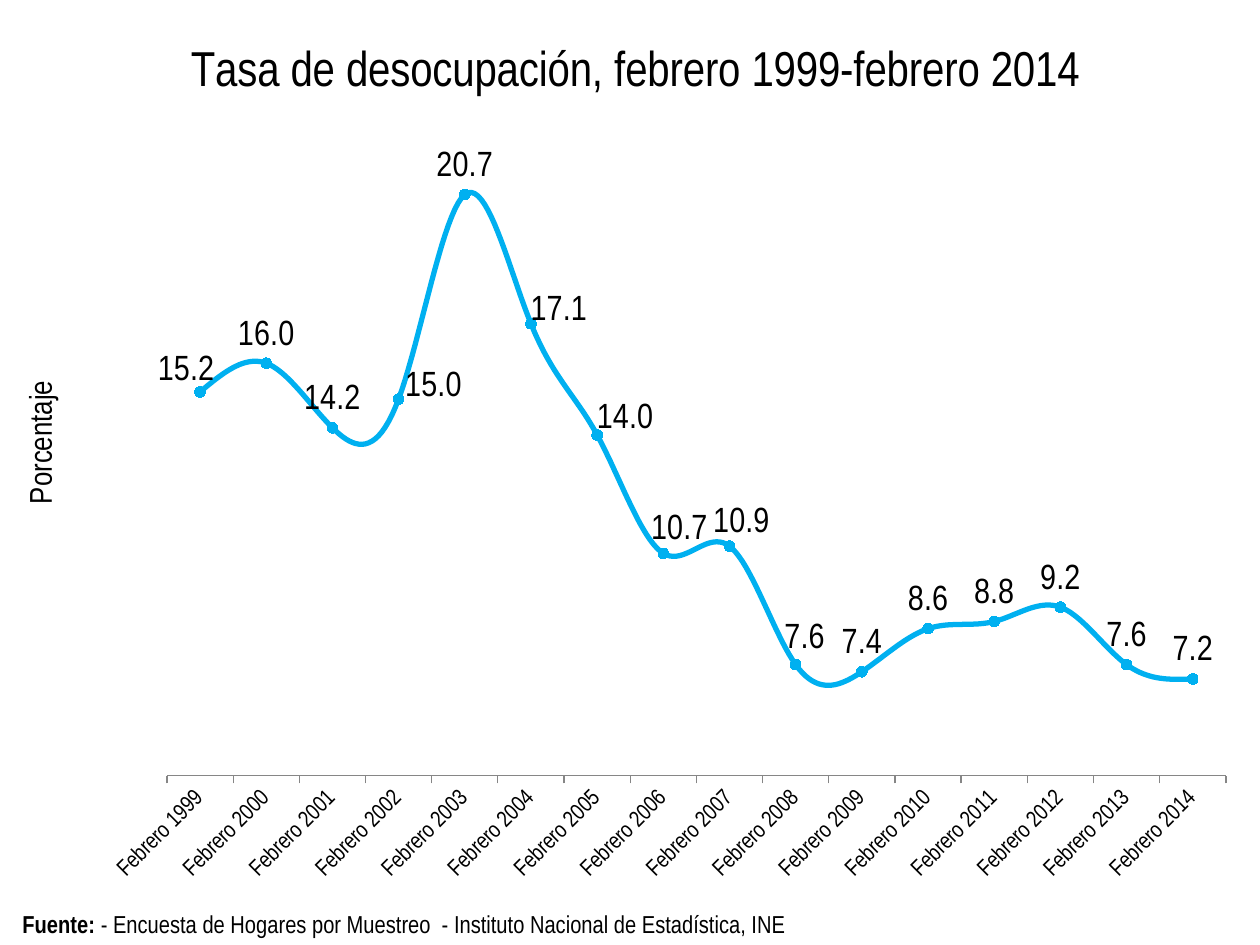
from lxml import etree
from pptx import Presentation
from pptx import util as u
from pptx.chart.data import CategoryChartData
from pptx.dml.color import RGBColor
from pptx.enum import chart as c, text
from pptx.oxml.ns import qn

PX = 914400 // 126
BLACK = RGBColor(0x00, 0x00, 0x00)
BLUE = RGBColor(0x00, 0xB0, 0xF0)
GRAY = RGBColor(0x86, 0x86, 0x86)
FONT = "Arial Narrow"
NUMBER_FORMAT = "0.0"

CHART_BOX = (20, 13, 1231, 886)
PLOT_BOX = (147, 117, 1059, 646)  # inside the chart
TITLE_AT = (162, 23)
AXIS_TITLE_AT = (0, 362)
RATES = [15.2, 16, 14.2, 15, 20.7, 17.1, 14, 10.7,
         10.9, 7.6, 7.4, 8.6, 8.8, 9.2, 7.6, 7.2]
FIRST_YEAR = 1999
# Point index: shift of its label from the place above the marker
LABEL_SHIFTS = {0: (-14, 7), 3: (35, 16), 5: (28, 15), 6: (28, 12),
                7: (16, 4), 8: (12, 4), 9: (9, 2)}


def px(*lengths):
    return [u.Emu(length * PX) for length in lengths]


def set_font(font, size, bold=False):
    font.name, font.size, font.bold = FONT, u.Pt(size), bold
    font.color.rgb = BLACK


def make_layout(lengths, inner=False, edge=True):
    """Manual layout from px lengths, as shares of the chart size."""
    layout = etree.Element(qn("c:layout"))
    manual = etree.SubElement(layout, qn("c:manualLayout"))
    if inner:
        etree.SubElement(manual, qn("c:layoutTarget")).set("val", "inner")
    if edge:
        for name in ("c:xMode", "c:yMode"):
            etree.SubElement(manual, qn(name)).set("val", "edge")
    for name, length, whole in zip("xywh", lengths, CHART_BOX[2:] * 2):
        etree.SubElement(manual, qn("c:" + name)).set("val", f"{length / whole:.4f}")
    return layout


def place(element, layout, after=None):
    """Put the layout in an element, after the named child if there is one."""
    for old in element.findall(qn("c:layout")):
        element.remove(old)
    if after is None:
        element.insert(0, layout)
    else:
        element.find(qn(after)).addnext(layout)


def set_title(title, words, size, position, rotation=0):
    frame = title.text_frame
    frame.text = words
    set_font(frame.paragraphs[0].font, size)
    set_font(frame.paragraphs[0].runs[0].font, size)
    body = title._element.find(".//" + qn("a:bodyPr"))
    body.set("rot", str(rotation * 60000))
    body.set("vert", "horz")
    place(title._element, make_layout(position), "c:tx")


def format_axes(chart):
    category_axis, value_axis = chart.category_axis, chart.value_axis
    category_axis.major_tick_mark = c.XL_TICK_MARK.OUTSIDE
    category_axis.has_major_gridlines = False
    category_axis.format.line.color.rgb = GRAY
    set_font(category_axis.tick_labels.font, 13)
    category_axis._element.find(".//" + qn("a:bodyPr")).set("rot", str(-45 * 60000))

    value_axis.minimum_scale, value_axis.maximum_scale = 4.5, 22.5
    value_axis.has_major_gridlines = False
    value_axis.tick_labels.number_format = NUMBER_FORMAT
    value_axis.tick_labels.number_format_is_linked = False
    set_title(value_axis.axis_title, "Porcentaje", 18, AXIS_TITLE_AT, -90)
    value_axis.visible = False


def format_series(series):
    series.smooth = True
    series.format.line.color.rgb = BLUE
    series.format.line.width = u.Pt(3)
    marker = series.marker
    marker.style, marker.size = c.XL_MARKER_STYLE.CIRCLE, 6
    marker.format.fill.solid()
    marker.format.fill.fore_color.rgb = BLUE
    marker.format.line.color.rgb = BLUE


def add_labels(series):
    labels = series.data_labels
    labels.show_value = True
    labels.number_format = NUMBER_FORMAT
    labels.number_format_is_linked = False
    labels.position = c.XL_LABEL_POSITION.ABOVE
    set_font(labels.font, 20)
    for index, shift in LABEL_SHIFTS.items():
        label = series.points[index].data_label
        set_font(label.font, 20)
        label.position = c.XL_LABEL_POSITION.ABOVE
        element = labels._element.xpath(f"c:dLbl[c:idx/@val='{index}']")[0]
        place(element, make_layout(shift, edge=False), "c:idx")
        number_format = etree.Element(qn("c:numFmt"))
        number_format.set("formatCode", NUMBER_FORMAT)
        number_format.set("sourceLinked", "0")
        element.find(qn("c:layout")).addnext(number_format)


def add_rate_chart(slide):
    data = CategoryChartData(number_format=NUMBER_FORMAT)
    data.categories = [f"Febrero {FIRST_YEAR + i}" for i in range(len(RATES))]
    data.add_series("Series 1", RATES)
    chart = slide.shapes.add_chart(
        c.XL_CHART_TYPE.LINE_MARKERS, *px(*CHART_BOX), data).chart
    chart.has_legend = False
    chart.font.name, chart.font.size = "Calibri", u.Pt(10)
    chart.font.color.rgb = BLACK
    chart.plots[0].vary_by_categories = False
    set_title(chart.chart_title, "Tasa de desocupación, febrero 1999-febrero 2014",
              28, TITLE_AT)
    format_axes(chart)
    format_series(chart.plots[0].series[0])
    add_labels(chart.plots[0].series[0])
    place(chart._chartSpace.chart.plotArea, make_layout(PLOT_BOX, inner=True))


def add_source_note(slide):
    frame = slide.shapes.add_textbox(*px(10, 903, 867, 42)).text_frame
    frame.word_wrap = True
    frame.vertical_anchor = text.MSO_ANCHOR.MIDDLE
    paragraph = frame.paragraphs[0]
    parts = [("Fuente:", True),
             (" - Encuesta de Hogares por Muestreo  - "
              "Instituto Nacional de Estadística, INE", False)]
    for words, bold in parts:
        run = paragraph.add_run()
        run.text = words
        set_font(run.font, 14, bold)


def main():
    presentation = Presentation()
    presentation.slide_width, presentation.slide_height = px(1260, 945)
    # The title belongs to the chart, so the blank layout is used
    slide = presentation.slides.add_slide(presentation.slide_layouts[6])
    add_rate_chart(slide)
    add_source_note(slide)
    presentation.save("out.pptx")


if __name__ == "__main__":
    main()
